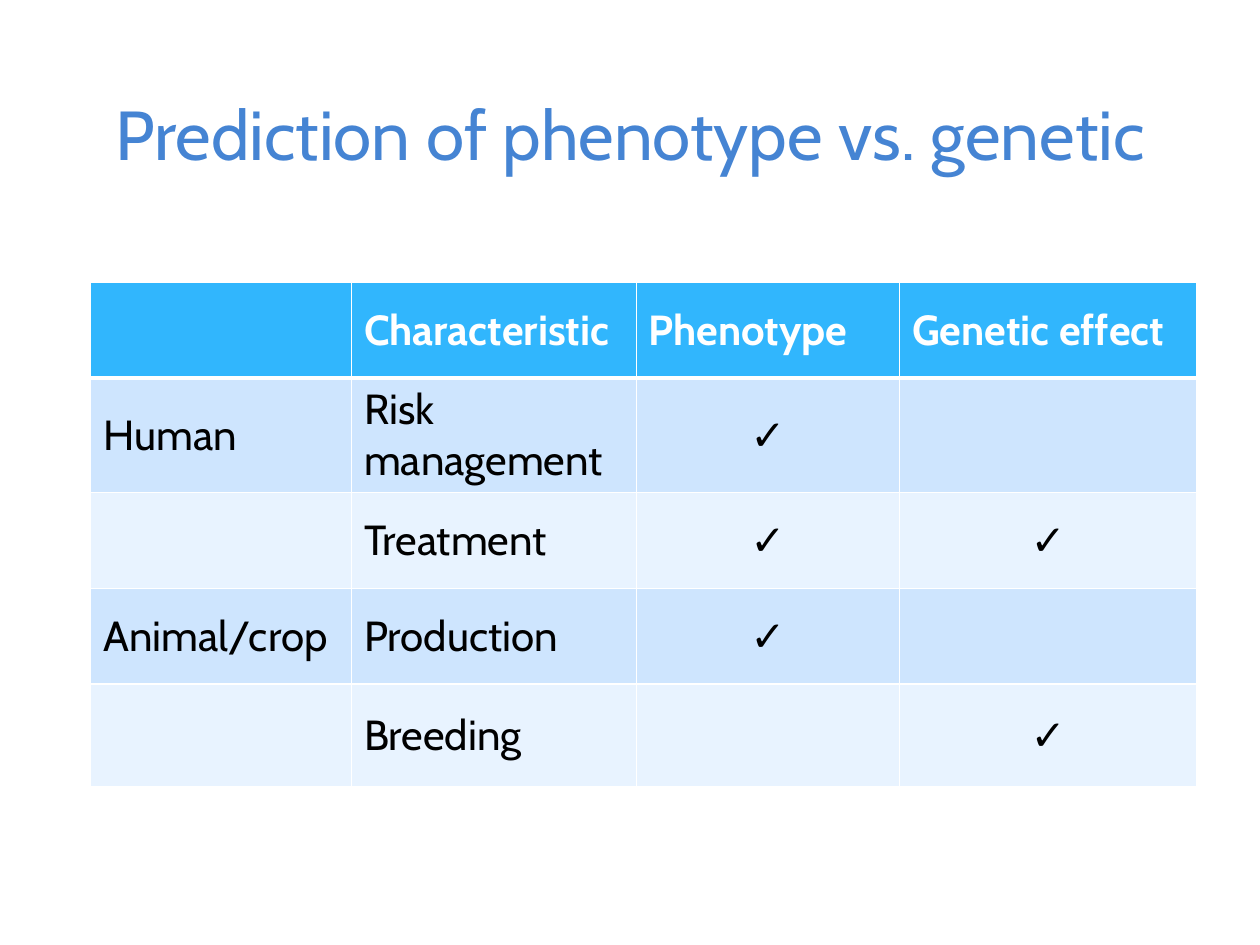
from lxml import etree
from pptx import Presentation
from pptx.dml.color import RGBColor
from pptx.enum import text
from pptx.oxml.ns import qn
from pptx.util import Inches, Pt

WHITE, BLACK, BLUE = "FFFFFF", "000000", "4584D3"
HEAD, BANDS = "31B6FD", ("CEE5FE", "E8F3FF")
CHECK = "✓"
COLS = (2.07, 2.26, 2.09, 2.36)
ROWS = (0.76, 0.76, 0.76, 0.76, 0.81)
DATA = (
    ("", "Characteristic", "Phenotype", "Genetic effect"),
    ("Human", "Risk management", CHECK, ""),
    ("", "Treatment", CHECK, CHECK),
    ("Animal/crop", "Production", CHECK, ""),
    ("", "Breeding", "", CHECK),
)


def color(code):
    return RGBColor.from_string(code)


class Deck:
    """Holds the style and the current slide."""

    font = "Cabin"

    def __init__(self, show):
        self.slide = show.slides.add_slide(show.slide_layouts[5])

    def format(self, frame, size, code, bold=False, center=False):
        frame.vertical_anchor = text.MSO_ANCHOR.MIDDLE
        for par in frame.paragraphs:
            par.alignment = text.PP_ALIGN.CENTER if center else text.PP_ALIGN.LEFT
            for run in par.runs:
                run.font.name = self.font
                run.font.size = Pt(size)
                run.font.bold = bold
                run.font.color.rgb = color(code)

    def title(self, words, left, top, width, height):
        box = self.slide.shapes.title
        box.left, box.top = Inches(left), Inches(top)
        box.width, box.height = Inches(width), Inches(height)
        box.text_frame.text = words
        self.format(box.text_frame, 39.6, BLUE, center=True)

    def edges(self, cell, top, bottom):
        props = cell._tc.get_or_add_tcPr()
        sides = (("a:lnL", 1), ("a:lnR", 1), ("a:lnT", top), ("a:lnB", bottom))
        for spot, (tag, width) in enumerate(sides):
            line = etree.Element(qn(tag), w=str(Pt(width)))
            fill = etree.SubElement(line, qn("a:solidFill"))
            etree.SubElement(fill, qn("a:srgbClr"), val=WHITE)
            props.insert(spot, line)

    def cell(self, cell, words, row):
        head = row == 0
        cell.fill.solid()
        cell.fill.fore_color.rgb = color(HEAD if head else BANDS[(row - 1) % 2])
        cell.text_frame.text = words
        self.format(cell.text_frame, 24, WHITE if head else BLACK,
                    bold=head, center=words == CHECK)
        cell.vertical_anchor = text.MSO_ANCHOR.MIDDLE
        # A thick rule parts the header from the body
        self.edges(cell, 3 if row == 1 else 1, 3 if head else 1)

    def table(self, data, left, top, cols, rows):
        grid = self.slide.shapes.add_table(
            len(rows), len(cols), Inches(left), Inches(top),
            Inches(sum(cols)), Inches(sum(rows))).table
        for col, width in zip(grid.columns, cols):
            col.width = Inches(width)
        for row, height in enumerate(rows):
            grid.rows[row].height = Inches(height)
            for col, words in enumerate(data[row]):
                self.cell(grid.cell(row, col), words, row)


def main():
    show = Presentation()
    show.slide_width, show.slide_height = Inches(10), Inches(7.5)
    deck = Deck(show)

    # Heading
    deck.title("Prediction of phenotype vs. genetic", 0.5, 0.37, 9, 1.37)

    # Comparison table
    deck.table(DATA, 0.72, 2.24, COLS, ROWS)

    show.save("out.pptx")


if __name__ == "__main__":
    main()
